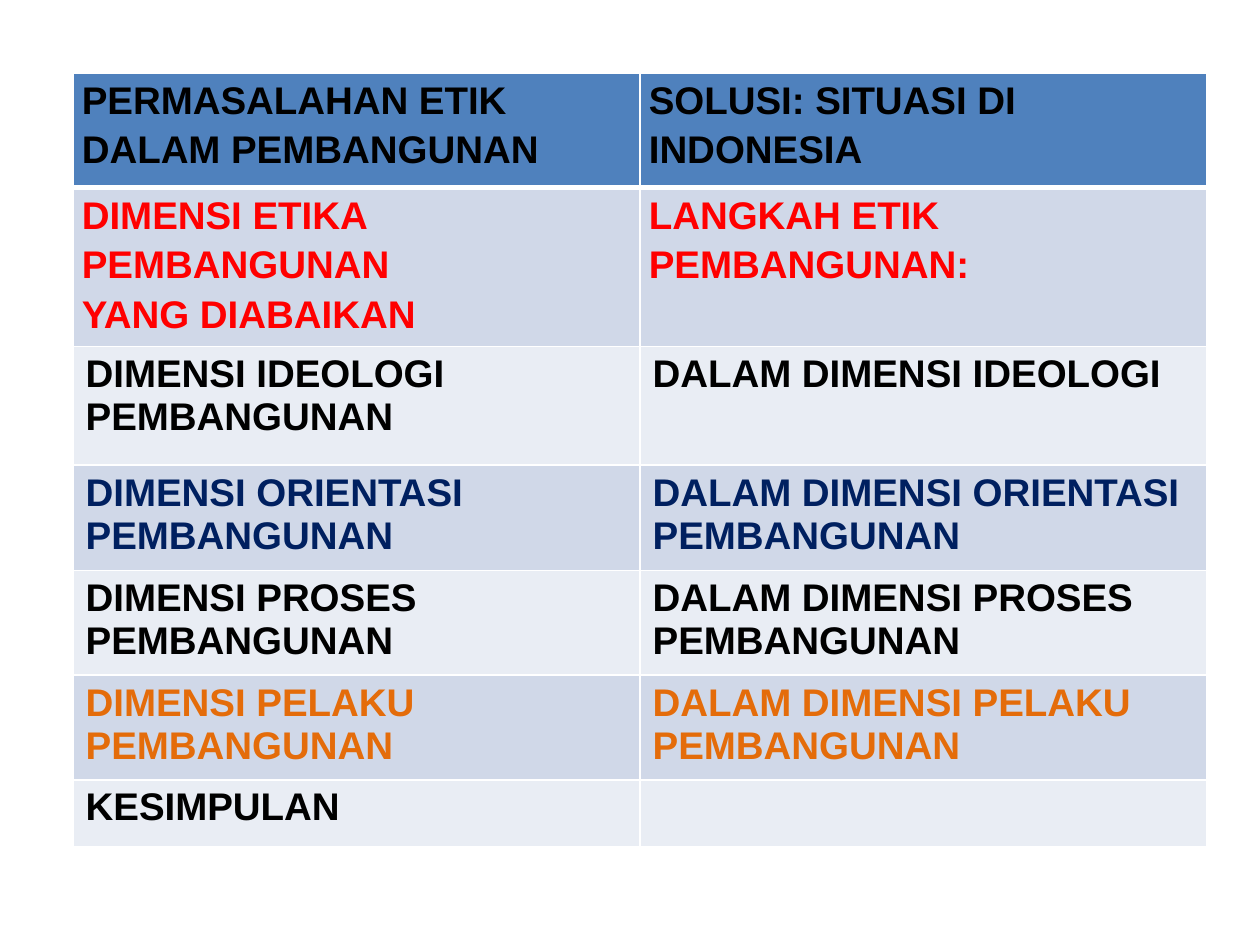
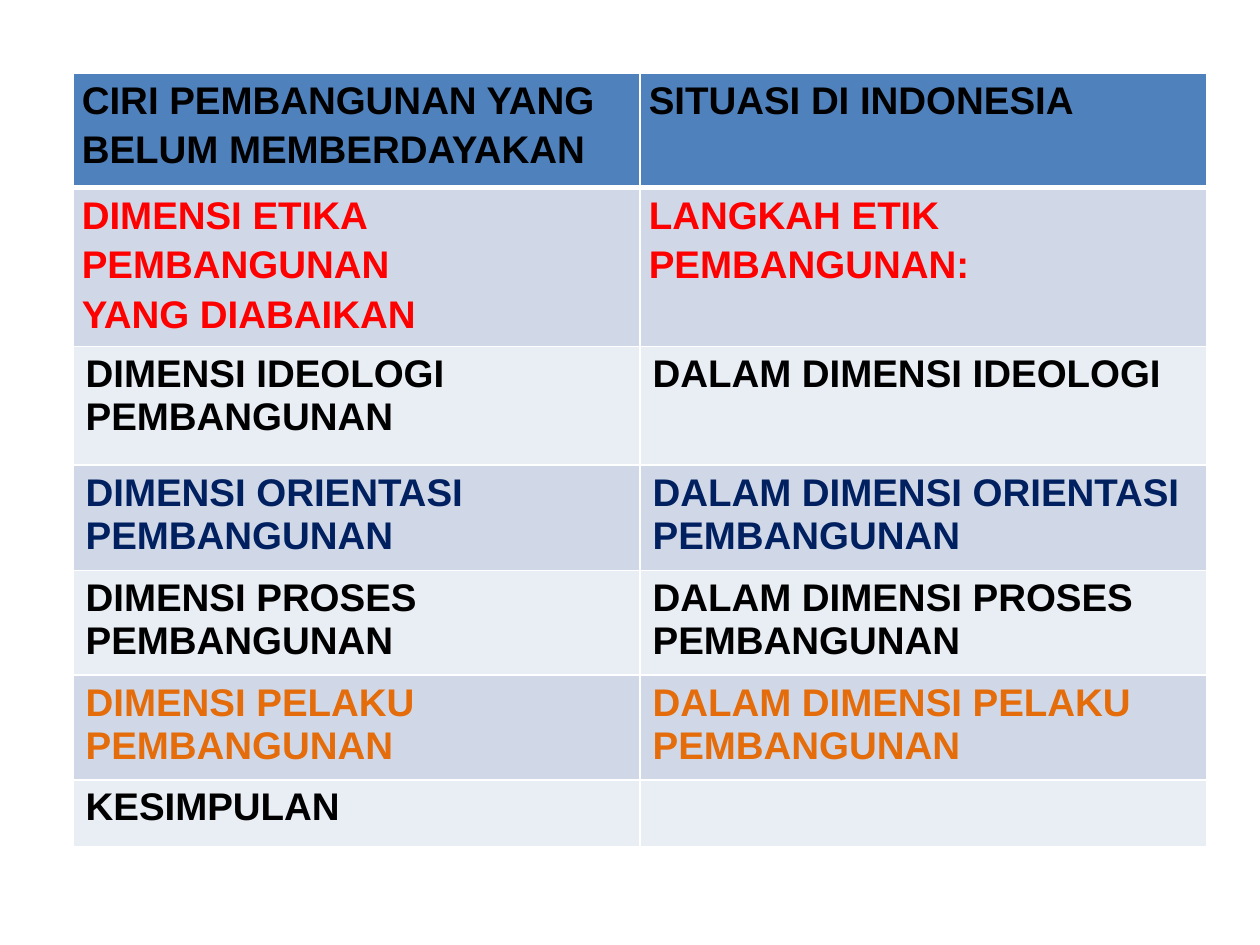
import dataclasses

import lxml.etree
import pptx
import pptx.dml.color
import pptx.enum.text
import pptx.oxml.ns
import pptx.util


@dataclasses.dataclass(frozen=True)
class Theme:
    font: str = "Arial"
    size: float = 22
    header_spacing: float = 1.15
    black: str = "000000"
    red: str = "FF0000"
    navy: str = "002060"
    orange: str = "E46C0A"
    border: str = "FFFFFF"
    header_fill: str = "4F81BD"
    band_fills: tuple = ("D0D8E8", "E9EDF4")
    thin: float = 1
    thick: float = 3


THEME = Theme()

# The slide is a grid of 100 columns by 75 rows
GRID_COLUMNS, GRID_ROWS = 100, 75
TABLE_LEFT, TABLE_TOP = 5.8, 5.8
COLUMN_WIDTHS = (45, 45)
ROW_HEIGHTS = (9.1, 12.6, 9.4, 8.4, 8.3, 8.3, 5.3)
TIGHT_ROWS = 2  # heading rows with narrow margins and wider line spacing

# Rows that both tables share: left text, right text, colour
SHARED_ROWS = (
    ("DIMENSI ETIKA PEMBANGUNAN \vYANG DIABAIKAN", "LANGKAH ETIK PEMBANGUNAN:", THEME.red),
    ("DIMENSI IDEOLOGI PEMBANGUNAN", "DALAM DIMENSI IDEOLOGI", THEME.black),
    ("DIMENSI ORIENTASI PEMBANGUNAN", "DALAM DIMENSI ORIENTASI PEMBANGUNAN", THEME.navy),
    ("DIMENSI PROSES PEMBANGUNAN", "DALAM DIMENSI PROSES PEMBANGUNAN", THEME.black),
    ("DIMENSI PELAKU PEMBANGUNAN", "DALAM DIMENSI PELAKU PEMBANGUNAN", THEME.orange),
    ("KESIMPULAN", "", THEME.black),
)

HEADINGS = (
    ("PERMASALAHAN ETIK DALAM PEMBANGUNAN", "SOLUSI: SITUASI DI INDONESIA"),
    ("CIRI PEMBANGUNAN YANG BELUM MEMBERDAYAKAN", "SITUASI DI INDONESIA"),
)


class PageBuilder:
    """Holds the deck, its theme and the current page."""

    def __init__(self, deck, theme):
        self.deck = deck
        self.theme = theme
        self.page = None

    def across(self, columns):
        return round(self.deck.slide_width * columns / GRID_COLUMNS)

    def down(self, rows):
        return round(self.deck.slide_height * rows / GRID_ROWS)

    def add_page(self):
        self.page = self.deck.slides.add_slide(self.deck.slide_layouts[6])

    def add_table(self, rows):
        frame = self.page.shapes.add_table(
            len(rows), len(COLUMN_WIDTHS),
            self.across(TABLE_LEFT), self.down(TABLE_TOP),
            self.across(sum(COLUMN_WIDTHS)), self.down(sum(ROW_HEIGHTS)))
        table = frame.table
        table.horz_banding = False
        for column, width in zip(table.columns, COLUMN_WIDTHS):
            column.width = self.across(width)
        for index, (row, height) in enumerate(zip(table.rows, ROW_HEIGHTS)):
            row.height = self.down(height)
            *texts, color = rows[index]
            for cell, text in zip(row.cells, texts):
                self.style_cell(cell, index)
                self.write_cell(cell, text, color, index < TIGHT_ROWS)

    def style_cell(self, cell, index):
        theme = self.theme
        # The rule between the header and the first row is thicker
        top = theme.thick if index == 1 else theme.thin
        bottom = theme.thick if index == 0 else theme.thin
        for side, width in (("L", theme.thin), ("R", theme.thin), ("T", top), ("B", bottom)):
            self.add_border(cell, side, width)
        fill = theme.band_fills[(index - 1) % 2] if index else theme.header_fill
        cell.fill.solid()
        cell.fill.fore_color.rgb = pptx.dml.color.RGBColor.from_string(fill)

    def add_border(self, cell, side, width):
        qn = pptx.oxml.ns.qn
        properties = cell._tc.get_or_add_tcPr()
        line = lxml.etree.SubElement(
            properties, qn(f"a:ln{side}"), w=str(int(pptx.util.Pt(width))))
        solid = lxml.etree.SubElement(line, qn("a:solidFill"))
        lxml.etree.SubElement(solid, qn("a:srgbClr"), val=self.theme.border)

    def write_cell(self, cell, text, color, tight):
        if tight:
            cell.margin_left = cell.margin_right = pptx.util.Inches(0.07)
            cell.margin_top = cell.margin_bottom = 0
        if not text:
            return
        cell.text_frame.text = text
        for para in cell.text_frame.paragraphs:
            para.alignment = pptx.enum.text.PP_ALIGN.LEFT
            if tight:
                para.line_spacing = self.theme.header_spacing
            for span in para.runs:
                span.font.name = self.theme.font
                span.font.size = pptx.util.Pt(self.theme.size)
                span.font.bold = True
                span.font.color.rgb = pptx.dml.color.RGBColor.from_string(color)


def main():
    deck = pptx.Presentation()
    deck.slide_width = pptx.util.Inches(10)
    deck.slide_height = pptx.util.Inches(7.5)
    builder = PageBuilder(deck, THEME)

    # One comparison table on each page
    for left, right in HEADINGS:
        builder.add_page()
        builder.add_table(((left, right, THEME.black),) + SHARED_ROWS)

    deck.save("out.pptx")


if __name__ == "__main__":
    main()
